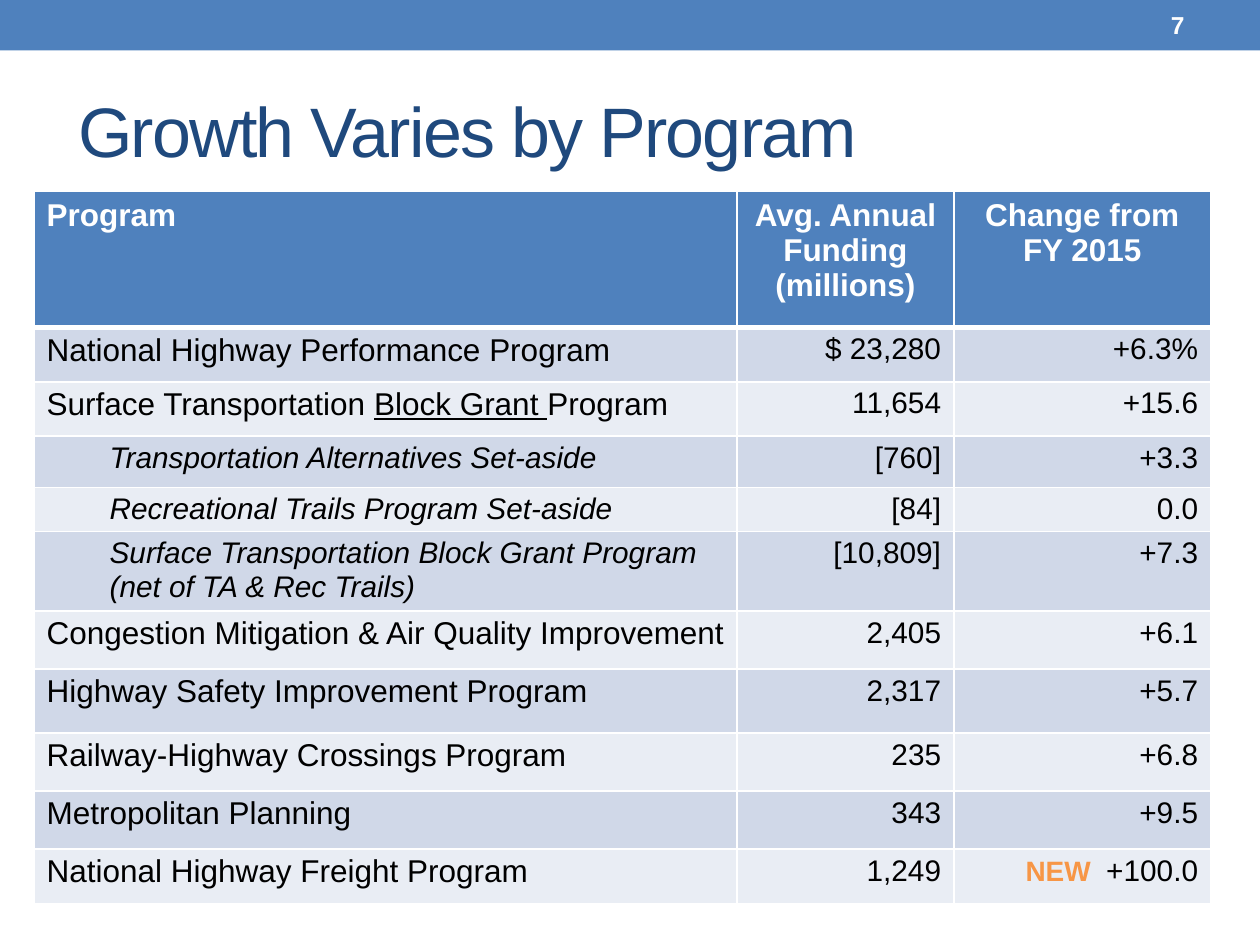
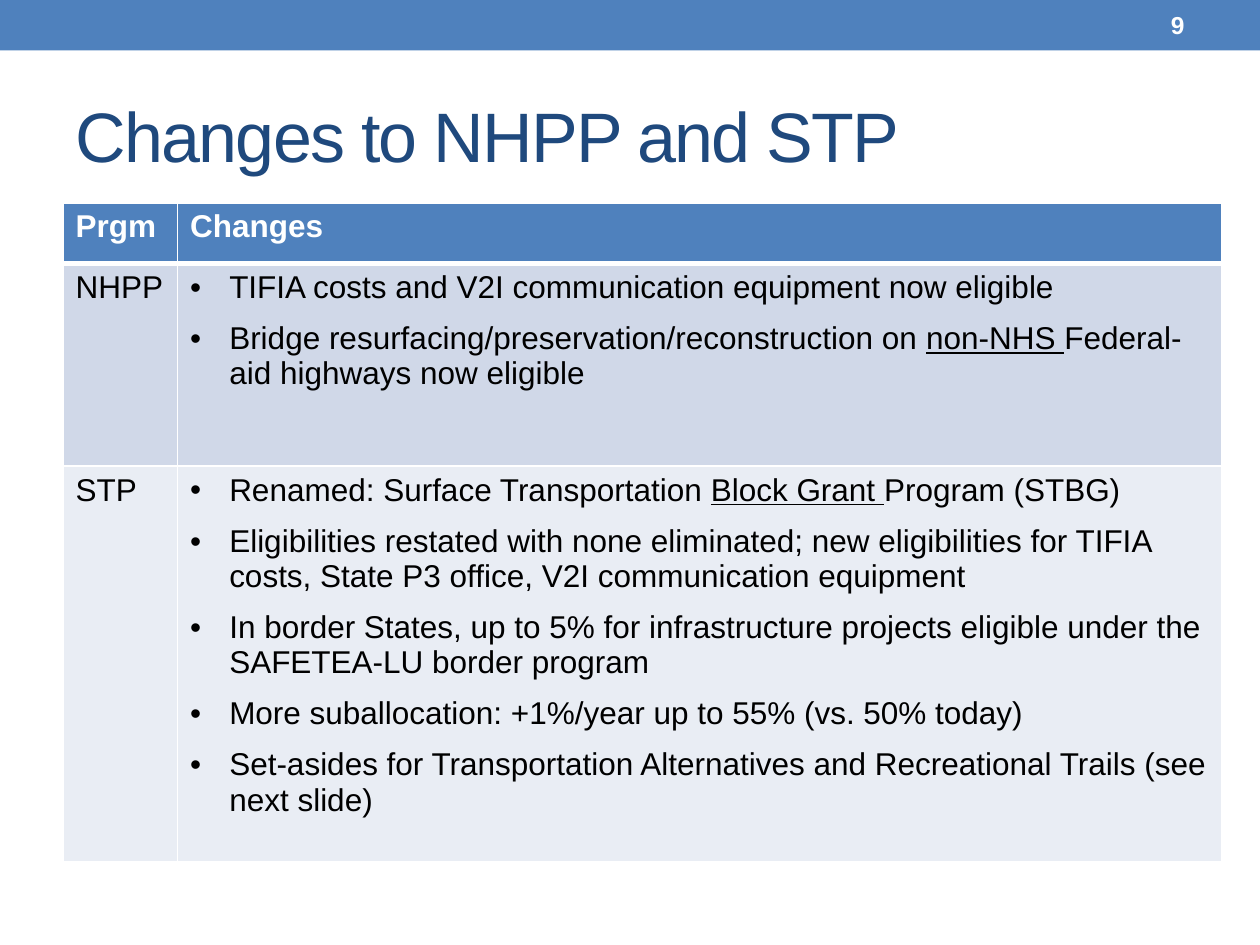
"""Builds two slides on highway program funding growth and program changes."""
from lxml import etree
from pptx import Presentation
from pptx.dml.color import RGBColor
from pptx.enum.shapes import MSO_SHAPE
from pptx.enum.text import MSO_ANCHOR, PP_ALIGN
from pptx.oxml.ns import qn
from pptx.util import Inches, Pt

RECT = MSO_SHAPE.RECTANGLE
MIDDLE = MSO_ANCHOR.MIDDLE
LEFT, CENTER, RIGHT = PP_ALIGN.LEFT, PP_ALIGN.CENTER, PP_ALIGN.RIGHT
BLUE = RGBColor(0x4F, 0x81, 0xBD)
NAVY = RGBColor(0x1F, 0x49, 0x7D)
ORANGE = RGBColor(0xF7, 0x96, 0x46)
WHITE = RGBColor(0xFF, 0xFF, 0xFF)
BLACK = RGBColor(0, 0, 0)
BANDS = [RGBColor(0xE9, 0xED, 0xF4), RGBColor(0xD0, 0xD8, 0xE8)]
FONT = "Arial"

SLIDES = [
    {"title": "Growth Varies by Program", "title_at": (0.52, 0.49), "number": "7",
     "table_at": (0.27, 1.52), "cols": [5.58, 1.72, 2.04],
     "heights": [1.08, 0.43, 0.43, 0.41, 0.35, 0.63, 0.46, 0.51, 0.46, 0.46, 0.43],
     "rows": [
         ["Program", "Avg. Annual Funding\v(millions)", "Change from FY 2015"],
         ["National Highway Performance Program", "$ 23,280", "+6.3%"],
         ["Surface Transportation _Block Grant _Program", "11,654", "+15.6"],
         ["Transportation Alternatives Set-aside", "[760]", "+3.3"],
         ["Recreational Trails Program Set-aside", "[84]", "0.0"],
         ["Surface Transportation Block Grant Program (net of TA & Rec Trails)",
          "[10,809]", "+7.3"],
         ["Congestion Mitigation & Air Quality Improvement", "2,405", "+6.1"],
         ["Highway Safety Improvement Program", "2,317", "+5.7"],
         ["Railway-Highway Crossings Program", "235", "+6.8"],
         ["Metropolitan Planning", "343", "+9.5"],
         ["National Highway Freight Program", "1,249", "+100.0"],
     ]},
    {"title": "Changes to NHPP and STP", "title_at": (0.5, 0.53), "number": "9",
     "table_at": (0.5, 1.61), "cols": [0.91, 8.29], "heights": [0.48, 1.61, 3.14],
     "rows": [
         ["Prgm", "Changes"],
         ["NHPP", [
             "TIFIA costs and V2I communication equipment now eligible",
             "Bridge resurfacing/preservation/reconstruction on _non-NHS _"
             "Federal-aid highways now eligible"]],
         ["STP", [
             "Renamed: Surface Transportation _Block Grant _Program (STBG)",
             "Eligibilities restated with none eliminated; new eligibilities for TIFIA "
             "costs, State P3 office, V2I communication equipment",
             "In border States, up to 5% for infrastructure projects eligible under the "
             "SAFETEA-LU border program",
             "More suballocation: +1%/year up to 55% (vs. 50% today)",
             "Set-asides for Transportation Alternatives and Recreational Trails "
             "(see next slide)"]],
     ]},
]


def style_runs(p, size, color, bold=False):
    for r in p.runs:
        r.font.name, r.font.size, r.font.bold = FONT, Pt(size), bold
        r.font.color.rgb = color


def style_cell(cell, row):
    cell.fill.solid()
    cell.fill.fore_color.rgb = BANDS[row % 2] if row else BLUE
    widths = {"L": 1, "R": 1, "T": 3 if row == 1 else 1, "B": 1 if row else 3}
    tcPr = cell._tc.get_or_add_tcPr()
    for i, (side, width) in enumerate(widths.items()):
        ln = etree.Element(qn(f"a:ln{side}"), w=str(Pt(width)))
        fill = etree.SubElement(ln, qn("a:solidFill"))
        etree.SubElement(fill, qn("a:srgbClr"), val=str(WHITE))
        tcPr.insert(i, ln)


prs = Presentation()
prs.slide_width, prs.slide_height = Inches(10), Inches(7.5)

for data in SLIDES:
    s = prs.slides.add_slide(prs.slide_layouts[5])
    band = s.shapes.add_shape(RECT, 0, 0, prs.slide_width, Inches(0.4))
    band.shadow.inherit = False
    band.fill.solid()
    band.fill.fore_color.rgb = BLUE
    band.line.fill.background()

    title = s.shapes.title
    title.left, title.top = [Inches(v) for v in data["title_at"]]
    title.width, title.height = Inches(9), Inches(1.08)
    tf = title.text_frame
    tf.text = data["title"]
    tf.vertical_anchor = MIDDLE
    p = tf.paragraphs[0]
    p.alignment = LEFT
    style_runs(p, 40, NAVY)
    p.runs[0].font._element.set("spc", "-100")

    number = s.shapes.add_textbox(Inches(8.33), Inches(0.02), Inches(1.17), Inches(0.36))
    tf = number.text_frame
    tf.word_wrap = True
    tf.text = data["number"]
    tf.vertical_anchor = MIDDLE
    tf.paragraphs[0].alignment = RIGHT
    style_runs(tf.paragraphs[0], 14, WHITE, True)

    left, top = data["table_at"]
    cols, heights = data["cols"], data["heights"]
    table = s.shapes.add_table(len(heights), len(cols), Inches(left), Inches(top),
                               Inches(sum(cols)), Inches(sum(heights))).table
    for column, width in zip(table.columns, cols):
        column.width = Inches(width)
    for row, height in zip(table.rows, heights):
        row.height = Inches(height)

    funding = len(cols) == 3
    for i, values in enumerate(data["rows"]):
        for j, value in enumerate(values):
            cell = table.cell(i, j)
            style_cell(cell, i)
            if funding and i:
                cell.margin_top, cell.margin_bottom = Inches(0.04), Inches(0.02)
            bulleted = isinstance(value, list)
            set_aside = funding and j == 0 and 3 <= i <= 5
            size = 17 if funding and i and (j or set_aside) else 18
            tf = cell.text_frame
            for k, text in enumerate(value if bulleted else [value]):
                p = tf.add_paragraph() if k else tf.paragraphs[0]
                parts = text.split("_")
                p.text = parts[0]
                for n, part in enumerate(parts[1:], 1):
                    r = p.add_run()
                    r.text = part
                    r.font.underline = n % 2 == 1
                style_runs(p, size, BLACK if i else WHITE, i == 0)
                if funding and j:
                    p.alignment = RIGHT if i else CENTER
                if set_aside:
                    p.level = 1
                    p._p.get_or_add_pPr().set("marL", str(Inches(0.5)))
                    p.runs[0].font.italic = True
                if bulleted:
                    p.space_after = Pt(6 if i == 1 and k == 1 else 9)
                    pPr = p._p.get_or_add_pPr()
                    pPr.set("marL", str(Inches(0.31)))
                    pPr.set("indent", str(-Inches(0.31)))
                    etree.SubElement(pPr, qn("a:buFont"), typeface=FONT)
                    etree.SubElement(pPr, qn("a:buChar"), char="•")

    if funding:
        p = table.cell(len(heights) - 1, 2).text_frame.paragraphs[0]
        p.text = "NEW  "
        style_runs(p, 16, ORANGE, True)
        r = p.add_run()
        r.text = data["rows"][-1][2]
        r.font.name, r.font.size = FONT, Pt(17)
        r.font.color.rgb = BLACK
    else:
        table.cell(0, 0).margin_right = 0

prs.save("out.pptx")
